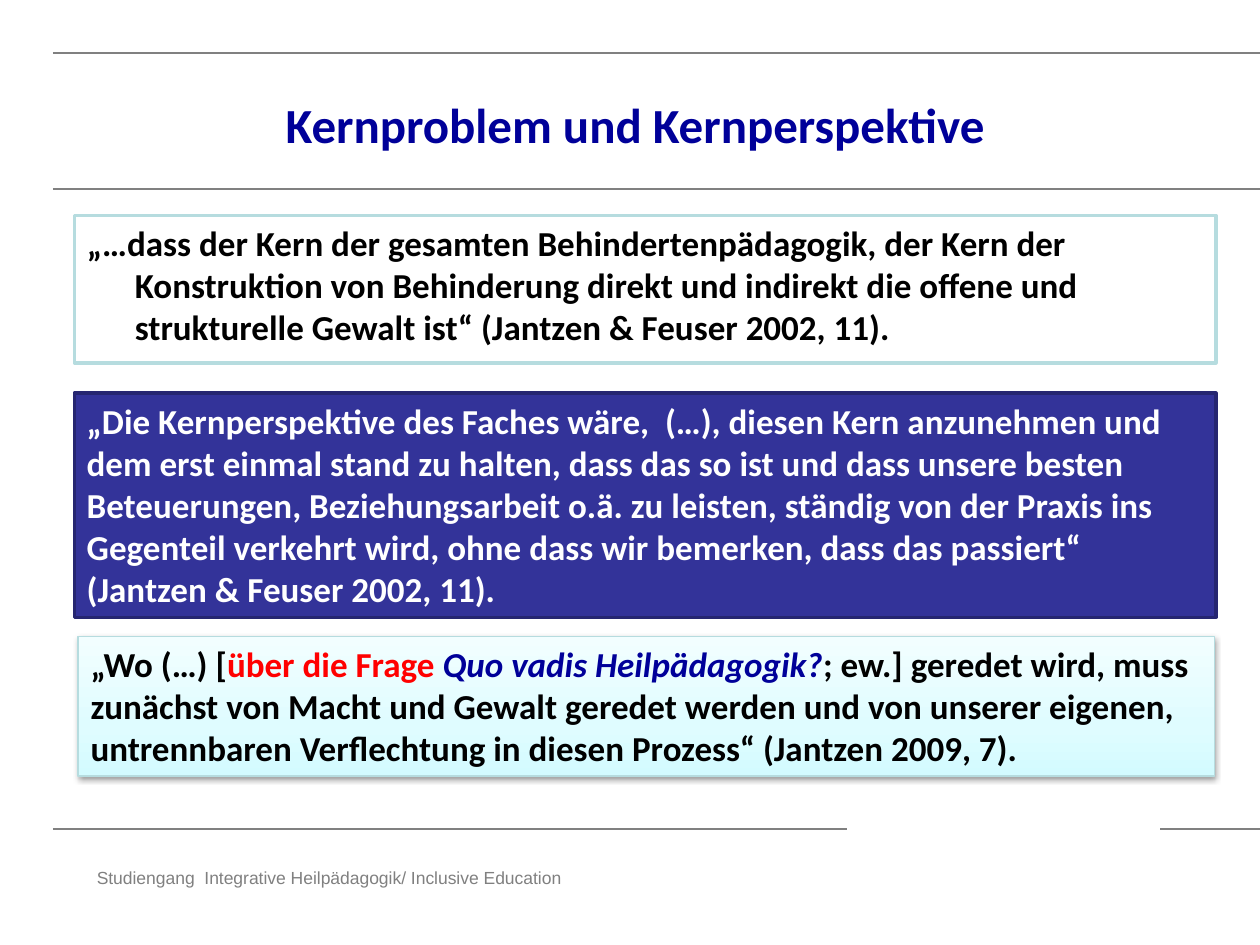
from copy import deepcopy
from dataclasses import dataclass

from lxml import etree
from pptx import Presentation
from pptx.dml.color import RGBColor
from pptx.enum.shapes import MSO_CONNECTOR, MSO_SHAPE
from pptx.enum.text import MSO_ANCHOR, MSO_AUTO_SIZE, PP_ALIGN
from pptx.oxml.ns import qn
from pptx.util import Inches, Pt

STRAIGHT = MSO_CONNECTOR.STRAIGHT
RECT = MSO_SHAPE.RECTANGLE
TOP, MIDDLE = MSO_ANCHOR.TOP, MSO_ANCHOR.MIDDLE
NO_FIT = MSO_AUTO_SIZE.NONE
LEFT, CENTER = PP_ALIGN.LEFT, PP_ALIGN.CENTER


@dataclass(frozen=True)
class Theme:
    """Colours, fonts and type sizes of the slide."""
    navy: str = "000099"
    black: str = "000000"
    white: str = "FFFFFF"
    red: str = "FF0000"
    grey: str = "808080"
    blue: str = "333399"
    edge: str = "262671"
    aqua: str = "B6DCDF"
    fade: tuple = ((0, "D3FBFF"), (0.35, "DFFCFF"), (1, "F2FEFF"))
    main: str = "Calibri"
    foot: str = "Arial"
    head_size: int = 28
    text_size: int = 20
    foot_size: int = 10


THEME = Theme()


def rgb(code):
    """Turn a hex code into a colour."""
    return RGBColor.from_string(code)


def place(shape, box):
    """Move and size a shape, in inches."""
    shape.left, shape.top, shape.width, shape.height = map(Inches, box)


def add_run(para, text, color, size=THEME.text_size, face=THEME.main,
            bold=True, italic=False):
    """Add one formatted run."""
    run = para.add_run()
    run.text = text
    font = run.font
    font.name, font.size, font.bold, font.italic = face, Pt(size), bold, italic
    font.color.rgb = rgb(color)


def set_frame(shape, anchor=TOP, align=LEFT):
    """Prepare a text frame and return its first paragraph."""
    frame = shape.text_frame
    frame.word_wrap = True
    frame.auto_size = NO_FIT
    frame.vertical_anchor = anchor
    para = frame.paragraphs[0]
    para.alignment = align
    para.space_before = Pt(0)
    return para


def hang(para):
    """Give a paragraph a hanging indent without a bullet."""
    props = para._p.get_or_add_pPr()
    props.set("marL", str(Inches(0.38)))
    props.set("indent", str(-Inches(0.38)))
    etree.SubElement(props, qn("a:buNone"))


def outline(shape, color, width):
    """Set the line of a shape or connector."""
    shape.line.color.rgb = rgb(color)
    shape.line.width = Pt(width)


def add_rule(slide, start, end, y):
    """Draw a thin level line."""
    rule = slide.shapes.add_connector(
        STRAIGHT, Inches(start), Inches(y), Inches(end), Inches(y))
    outline(rule, THEME.grey, 0.75)
    etree.SubElement(rule._element.spPr, qn("a:effectLst"))


def add_panel(slide, box, edge, width, runs):
    """Draw a framed box of text runs and return it."""
    panel = slide.shapes.add_shape(RECT, *map(Inches, box))
    panel.shadow.inherit = False
    outline(panel, edge, width)
    para = set_frame(panel)
    for text, color, italic in runs:
        add_run(para, text, color, italic=italic)
    return panel


def fade_fill(shape, stops):
    """Fill a shape with a gradient that rises from its foot."""
    fill = shape.fill
    fill.gradient()
    fill.gradient_angle = 90
    first = shape._element.spPr.find(".//" + qn("a:gs"))
    first.addnext(deepcopy(first))
    for stop, (place_at, color) in zip(fill.gradient_stops, stops):
        stop.position = place_at
        stop.color.rgb = rgb(color)


def drop_shadow(shape):
    """Add a soft shadow below a shape."""
    effects = shape._element.spPr.find(qn("a:effectLst"))
    shade = etree.SubElement(
        effects, qn("a:outerShdw"), blurRad=str(Pt(3.1)), dist=str(Pt(1.6)),
        dir="5400000", rotWithShape="0")
    color = etree.SubElement(shade, qn("a:srgbClr"), val=THEME.black)
    etree.SubElement(color, qn("a:alpha"), val="38000")


def add_title(slide, text):
    """Fill the title placeholder."""
    title = slide.shapes.title
    place(title, (0.99, 0.6, 8.1, 0.68))
    para = set_frame(title, MIDDLE, CENTER)
    para.line_spacing = 1.2
    add_run(para, text, THEME.navy, THEME.head_size)


def add_body(slide, text):
    """Fill the body placeholder as a framed quote."""
    body = slide.placeholders[1]
    place(body, (0.59, 1.71, 9.06, 1.17))
    outline(body, THEME.aqua, 2)
    para = set_frame(body)
    hang(para)
    add_run(para, text, THEME.black)


def add_foot(slide, text):
    """Add the footer line."""
    box = slide.shapes.add_textbox(*map(Inches, (0.67, 6.83, 8.5, 0.58)))
    para = set_frame(box)
    add_run(para, text, THEME.grey, THEME.foot_size, THEME.foot, False)


def main():
    """Build and save the slide."""
    deck = Presentation()
    deck.slide_width, deck.slide_height = Inches(10), Inches(7.5)
    slide = deck.slides.add_slide(deck.slide_layouts[1])
    for start, end, y in ((0.42, 10, 1.5), (0.42, 10, 0.42),
                          (0.42, 6.72, 6.58), (9.21, 10, 6.58)):
        add_rule(slide, start, end, y)
    add_foot(slide, "Studiengang  Integrative Heilpädagogik/ Inclusive Education")
    add_title(slide, "Kernproblem und Kernperspektive")
    add_body(slide, "„…dass der Kern der gesamten Behindertenpädagogik, der Kern "
             "der Konstruktion von Behinderung direkt und indirekt die offene "
             "und strukturelle Gewalt ist“ (Jantzen & Feuser 2002, 11).")
    core = add_panel(slide, (0.59, 3.12, 9.06, 1.78), THEME.edge, 2, [
        ("„Die Kernperspektive des Faches wäre,  (…), diesen Kern anzunehmen "
         "und dem erst einmal stand zu halten, dass das so ist und dass unsere "
         "besten Beteuerungen, Beziehungsarbeit o.ä. zu leisten, ständig von "
         "der Praxis ins Gegenteil verkehrt wird, ohne dass wir bemerken, dass "
         "das passiert“ (Jantzen & Feuser 2002, 11).", THEME.white, False)])
    core.fill.solid()
    core.fill.fore_color.rgb = rgb(THEME.blue)
    power = add_panel(slide, (0.62, 5.05, 9.02, 1.11), THEME.aqua, 0.75, [
        ("„Wo (…) [", THEME.black, False),
        ("über die Frage ", THEME.red, False),
        ("Quo vadis Heilpädagogik?", THEME.navy, True),
        ("; ew.] geredet wird, muss zunächst von Macht und Gewalt geredet "
         "werden und von unserer eigenen, untrennbaren Verflechtung in diesen "
         "Prozess“ (Jantzen 2009, 7).", THEME.black, False)])
    fade_fill(power, THEME.fade)
    drop_shadow(power)
    deck.save("out.pptx")


if __name__ == "__main__":
    main()
